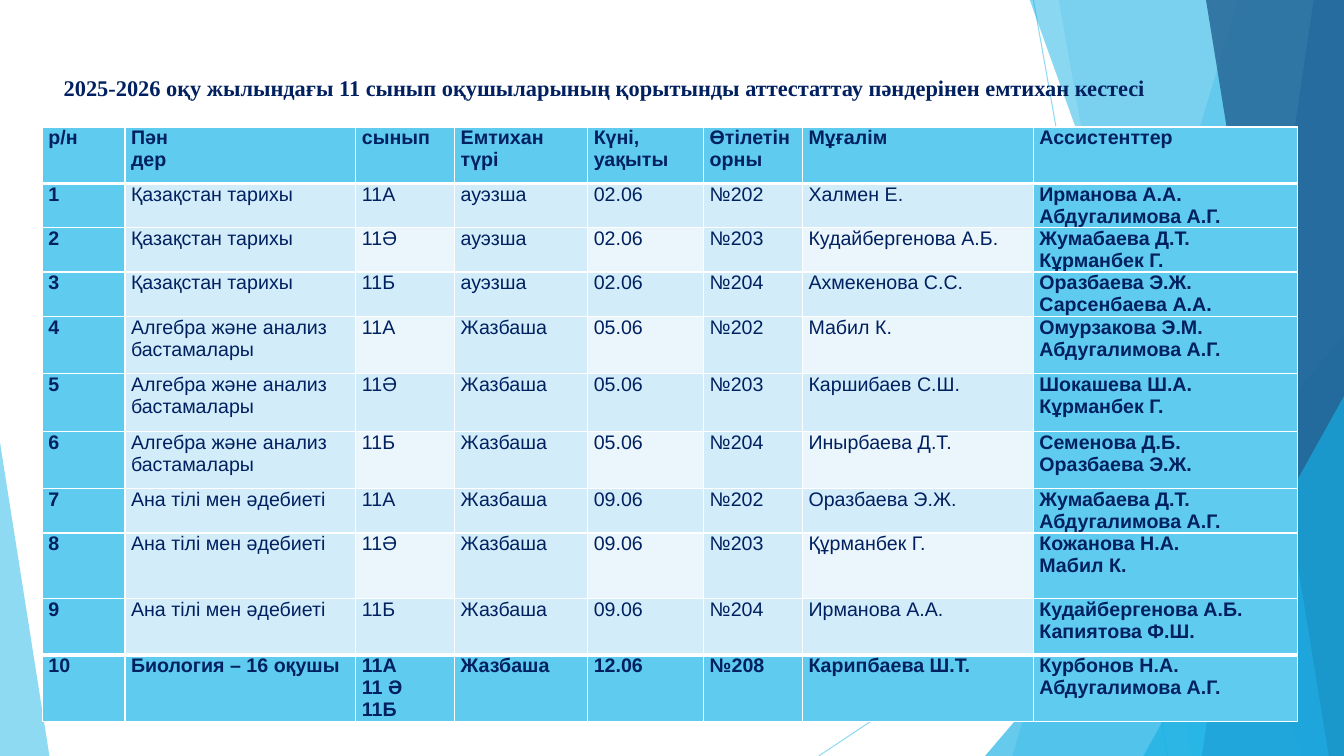
from pptx import Presentation
from pptx.dml.color import RGBColor
from pptx.enum.shapes import MSO_CONNECTOR, MSO_SHAPE
from pptx.enum.text import MSO_ANCHOR, PP_ALIGN
from pptx.oxml.ns import qn
from pptx.util import Inches, Pt
from lxml.etree import SubElement

COLORS = {
    "sky": "5FCBEF",
    "azure": "17B0E4",
    "blue": "2E83C3",
    "steel": "226292",
    "pale": "D2ECF9",
    "paler": "EAF6FC",
    "navy": "002060",
    "white": "FFFFFF",
}
WIDTH, HEIGHT, BLEED = 13.33, 7.5, -0.01


def rgb(name):
    return RGBColor.from_string(COLORS[name])


def paint(fill, sp, color, opacity):
    """Give a fill a solid colour with an opacity in percent."""
    fill.solid()
    fill.fore_color.rgb = rgb(color)
    for clr in sp.element.spPr.iter(qn("a:srgbClr")):
        SubElement(clr, qn("a:alpha"), val=str(opacity * 1000))


prs = Presentation()
prs.slide_width, prs.slide_height = Inches(WIDTH), Inches(HEIGHT)
slide = prs.slides.add_slide(prs.slide_layouts[5])
shapes = slide.shapes

# Thin rays behind the facets
for x1, y1, x2, y2 in [(10.25, 0, 11.58, HEIGHT), (WIDTH, 4.03, 8.12, HEIGHT)]:
    ray = shapes.add_connector(
        MSO_CONNECTOR.STRAIGHT, Inches(x1), Inches(y1), Inches(x2), Inches(y2))
    ray.line.width = Pt(0.75)
    paint(ray.line.fill, ray, "sky", 70)
    SubElement(ray.element.spPr, qn("a:effectLst"))

# Facets: a band is (top x, bottom x) up to the right edge,
# a triangle is (left, top, width, apex position)
facets = [
    ((12.28, 10.04), "sky", 36),
    ((10.5, 11.82), "sky", 20),
    ((9.77, 3.33, 3.56, 1), "azure", 66),
    ((10.21, 12.91), "azure", 50),
    ((13.03, 11.92), "blue", 70),
    ((11.96, 13.18), "steel", 80),
    ((11.34, 3.93, 1.99, 1), "azure", 66),
    ((0, 4.39, 0.49, 0), "sky", 70),
]
for geometry, color, opacity in facets:
    if len(geometry) == 2:
        top_x, bottom_x = geometry
        outline = [(WIDTH, BLEED), (WIDTH, HEIGHT), (bottom_x, HEIGHT)]
        builder = shapes.build_freeform(Inches(top_x), Inches(BLEED))
        builder.add_line_segments([(Inches(x), Inches(y)) for x, y in outline])
        facet = builder.convert_to_shape()
    else:
        left, top, width, apex = geometry
        facet = shapes.add_shape(
            MSO_SHAPE.ISOSCELES_TRIANGLE, Inches(left), Inches(top),
            Inches(width), Inches(HEIGHT - top))
        facet.adjustments[0] = apex
    facet.shadow.inherit = False
    facet.line.fill.background()
    paint(facet.fill, facet, color, opacity)

# Title, brought in front of the facets
title = shapes.title
title.element.getparent().append(title.element)
title.left, title.top = Inches(0.2), Inches(0.67)
title.width, title.height = Inches(11.59), Inches(0.59)
tf = title.text_frame
tf.text = ("2025-2026 оқу жылындағы 11 сынып оқушыларының қорытынды "
           "аттестаттау пәндерінен емтихан кестесі")
tf.word_wrap = True
tf.vertical_anchor = MSO_ANCHOR.TOP
tf.margin_top = Inches(0.07)
p = tf.paragraphs[0]
p.alignment = PP_ALIGN.CENTER
font = p.runs[0].font
font.name, font.size, font.bold = "Times New Roman", Pt(16), True
font.color.rgb = rgb("navy")

# Exam timetable: each subject is taken by three classes in three rooms
header = ["р/н", "Пән\nдер", "сынып", "Емтихан\nтүрі", "Күні, уақыты",
          "Өтілетін\nорны", "Мұғалім", "Ассистенттер"]
subjects = [
    ("Қазақстан тарихы", "ауэзша", "02.06"),
    ("Алгебра және анализ бастамалары", "Жазбаша", "05.06"),
    ("Ана тілі мен әдебиеті", "Жазбаша", "09.06"),
]
classes = [("11А", "№202"), ("11Ә", "№203"), ("11Б", "№204")]
staff = [
    ("Халмен Е.", "Ирманова А.А.\nАбдугалимова А.Г."),
    ("Кудайбергенова А.Б.", "Жумабаева Д.Т.\nКұрманбек Г."),
    ("Ахмекенова С.С.", "Оразбаева Э.Ж.\nСарсенбаева А.А."),
    ("Мабил К.", "Омурзакова Э.М.\nАбдугалимова А.Г."),
    ("Каршибаев С.Ш.", "Шокашева Ш.А.\nКұрманбек Г."),
    ("Инырбаева Д.Т.", "Семенова Д.Б.\nОразбаева Э.Ж."),
    ("Оразбаева Э.Ж.", "Жумабаева Д.Т.\nАбдугалимова А.Г."),
    ("Құрманбек Г.", "Кожанова Н.А.\nМабил К."),
    ("Ирманова А.А.", "Кудайбергенова А.Б.\nКапиятова Ф.Ш."),
]
rows = [header]
for i, (teacher, assistants) in enumerate(staff):
    subject, form, date = subjects[i // 3]
    group, room = classes[i % 3]
    rows.append([str(i + 1), subject, group, form, date, room, teacher, assistants])
rows.append(["10", "Биология – 16 оқушы", "11А\n11 Ә\n11Б", "Жазбаша", "12.06",
             "№208", "Карипбаева Ш.Т.", "Курбонов Н.А.\nАбдугалимова А.Г."])

col_widths = [0.82, 2.29, 0.98, 1.32, 1.15, 0.98, 2.29, 2.62]
row_heights = [0.56, 0.44, 0.44, 0.44, 0.57, 0.57, 0.57, 0.44, 0.65, 0.56, 0.66]
last_row, last_col = len(rows) - 1, len(header) - 1
table = shapes.add_table(
    len(rows), len(header), Inches(0.42), Inches(1.26),
    Inches(sum(col_widths)), Inches(sum(row_heights))).table
for column, width in zip(table.columns, col_widths):
    column.width = Inches(width)
for row, height in zip(table.rows, row_heights):
    row.height = Inches(height)

for r, texts in enumerate(rows):
    for c, text in enumerate(texts):
        cell = table.cell(r, c)
        cell.text = text
        cell.margin_left = cell.margin_right = Inches(0.06)
        cell.margin_top = cell.margin_bottom = 0

        # Heavy rules under the header and above the last row
        heavy = {"T": r in (1, last_row), "B": r in (0, last_row - 1)}
        for side in "LRTB":
            weight = Pt(3) if heavy.get(side) else Pt(1)
            ln = SubElement(cell._tc.get_or_add_tcPr(), qn(f"a:ln{side}"), w=str(weight))
            SubElement(SubElement(ln, qn("a:solidFill")), qn("a:srgbClr"),
                       val=COLORS["white"])

        edge = r in (0, last_row) or c in (0, last_col)
        striped = r % 2 == 0 and c % 2 == 0
        cell.fill.solid()
        cell.fill.fore_color.rgb = rgb("sky" if edge else "paler" if striped else "pale")
        for p in cell.text_frame.paragraphs:
            font = p.runs[0].font
            font.name, font.size, font.bold = "Arial", Pt(14), edge
            font.color.rgb = rgb("navy")

prs.save("out.pptx")
